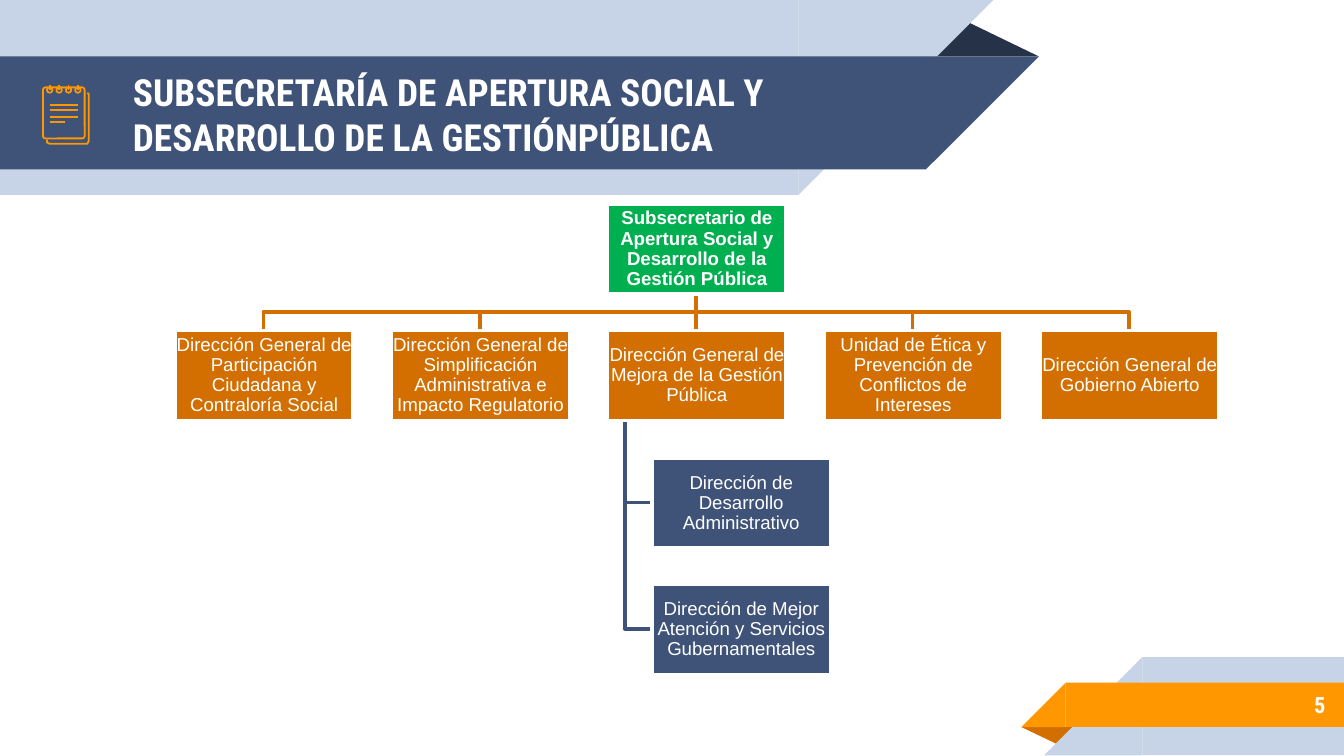
"""Build the organisation chart slide of an undersecretariat."""
from lxml import etree
from pptx import Presentation
from pptx.dml.color import RGBColor
from pptx.enum import shapes, text
from pptx.oxml.ns import qn
from pptx.util import Pt

SCALE = 9144  # EMU in one px, 100 px to the inch
KIND = shapes.MSO_SHAPE
ALIGN = text.PP_ALIGN
WHITE, PALE, NAVY, DARK = "FFFFFF", "C7D3E6", "3F5378", "263248"
GOLD, RUST, GREEN = "FF9800", "D26F00", "00B050"
HEAD_FONT, BODY_FONT = "Roboto Condensed", "Arial"

TITLE = "SUBSECRETARÍA DE APERTURA SOCIAL Y DESARROLLO DE LA GESTIÓNPÚBLICA"
PAGE = "5"
CHIEF = "Subsecretario de Apertura Social y Desarrollo de la Gestión Pública"
UNITS = [
    "Dirección General de Participación Ciudadana y Contraloría Social",
    "Dirección General de Simplificación Administrativa e Impacto Regulatorio",
    "Dirección General de Mejora de la Gestión Pública",
    "Unidad de Ética y Prevención de Conflictos de Intereses",
    "Dirección General de Gobierno Abierto",
]
TEAMS = [
    "Dirección de Desarrollo Administrativo",
    "Dirección de Mejor Atención y Servicios Gubernamentales",
]

# kind, left, top, width, height, fill, turn, flip
BANDS = [
    (KIND.ISOSCELES_TRIANGLE, 688, 14, 85, 28, DARK, 0, False),
    (KIND.RECTANGLE, 0, 0, 594, 145, PALE, 180, True),
    (KIND.RIGHT_TRIANGLE, 594, 0, 145, 145, PALE, 180, True),
    (KIND.RECTANGLE, 0, 42, 689, 84, NAVY, 180, True),
    (KIND.RIGHT_TRIANGLE, 689, 42, 84, 84, NAVY, 180, True),
    (KIND.ISOSCELES_TRIANGLE, 760, 541, 43, 14, RUST, 180, False),
    (KIND.RECTANGLE, 850, 489, 150, 73, PALE, 0, True),
    (KIND.RIGHT_TRIANGLE, 777, 489, 73, 73, PALE, 0, True),
    (KIND.RECTANGLE, 793, 508, 207, 33, GOLD, 0, True),
    (KIND.RIGHT_TRIANGLE, 760, 508, 33, 33, GOLD, 0, True),
]
BACK_SHEET = [(35, 104), (35, 106), (37, 107), (65, 107), (66, 105), (66, 70), (65, 69)]
RINGS = [37, 44, 51, 58]
RULES = [(78, 58), (82, 58), (87, 58), (91, 48)]

BOX_W, BOX_H = 133, 67
UNIT_X, UNIT_Y, UNIT_STEP = 130, 246, 161
CHIEF_Y = 152
TEAM_X, TEAM_Y, TEAM_STEP = 485, 341, 94
STEM_X = 465

prs = Presentation()
prs.slide_width, prs.slide_height = 1000 * SCALE, int(562.5 * SCALE)
slide = prs.slides.add_slide(prs.slide_layouts[6])
tree = slide.shapes


def px(*sizes):
    return [size * SCALE for size in sizes]


def hue(code):
    return RGBColor.from_string(code)


def paint(shape, fill=None, line=None, width=0.96):
    shape.shadow.inherit = False
    if fill:
        shape.fill.solid()
        shape.fill.fore_color.rgb = hue(fill)
    else:
        shape.fill.background()
    if line:
        shape.line.color.rgb = hue(line)
        shape.line.width = Pt(width)
    else:
        shape.line.fill.background()


def write(shape, words, font, size, align, bold=False, inset=10):
    frame = shape.text_frame
    frame.word_wrap = True
    frame.vertical_anchor = text.MSO_ANCHOR.MIDDLE
    frame.margin_left, frame.margin_right = px(inset, inset)
    frame.margin_top, frame.margin_bottom = px(inset, inset)
    para = frame.paragraphs[0]
    para.alignment = align
    run = para.add_run()
    run.text = words
    run.font.name, run.font.size, run.font.bold = font, Pt(size), bold
    run.font.color.rgb = hue(WHITE)
    return para


def stroke(x1, y1, x2, y2, color, width=0.96):
    line = tree.add_connector(shapes.MSO_CONNECTOR.STRAIGHT, *px(x1, y1, x2, y2))
    line.line.color.rgb = hue(color)
    line.line.width = Pt(width)
    etree.SubElement(line._element.spPr, qn("a:effectLst"))


def trace(points, color, width=0.96):
    pen = tree.build_freeform(*points[0], scale=SCALE)
    pen.add_line_segments(points[1:], close=False)
    paint(pen.convert_to_shape(), None, color, width)


def box(x, y, words, fill, bold=False):
    shape = tree.add_shape(KIND.RECTANGLE, *px(x, y, BOX_W, BOX_H))
    paint(shape, fill, WHITE, 2)
    para = write(shape, words, BODY_FONT, 10, ALIGN.CENTER, bold, 0)
    para.line_spacing = 0.9


def draw_bands():
    for kind, x, y, w, h, fill, turn, flip in BANDS:
        shape = tree.add_shape(kind, *px(x, y, w, h))
        paint(shape, fill)
        shape.rotation = turn
        if flip:
            shape._element.spPr.xfrm.set("flipH", "1")
        if kind == KIND.ISOSCELES_TRIANGLE:
            shape.adjustments[0] = 0.32


def draw_pad():
    trace(BACK_SHEET, GOLD)
    sheet = tree.add_shape(KIND.ROUNDED_RECTANGLE, *px(32, 65, 31, 38))
    sheet.adjustments[0] = 0.06
    paint(sheet, None, GOLD)
    for x in RINGS:
        ring = tree.add_shape(KIND.OVAL, *px(x - 2, 65, 4, 4))
        paint(ring, None, GOLD)
        stroke(x, 63, x, 67, GOLD)
    for y, end in RULES:
        stroke(37, y, end, y, GOLD)


def draw_chart():
    units = [UNIT_X + UNIT_STEP * i for i in range(len(UNITS))]
    teams = [TEAM_Y + TEAM_STEP * i for i in range(len(TEAMS))]
    mid = units[len(units) // 2]
    hub, low = mid + BOX_W // 2, CHIEF_Y + BOX_H - 1
    bar = (low + UNIT_Y) // 2
    for x in units:
        end = x + BOX_W // 2
        if x == mid:
            stroke(hub, low, hub, UNIT_Y, RUST, 2)
        else:
            trace([(hub, low), (hub, bar), (end, bar), (end, UNIT_Y)], RUST, 2)
    for y in teams:
        turn = y + BOX_H // 2
        trace([(STEM_X, UNIT_Y + BOX_H), (STEM_X, turn), (TEAM_X, turn)], NAVY, 2)
    box(mid, CHIEF_Y, CHIEF, GREEN, True)
    for x, words in zip(units, UNITS):
        box(x, UNIT_Y, words, RUST)
    for y, words in zip(teams, TEAMS):
        box(TEAM_X, y, words, NAVY)


draw_bands()
write(tree.add_textbox(*px(89, 43, 575, 84)), TITLE, HEAD_FONT, 20, ALIGN.LEFT, True)
write(tree.add_textbox(*px(833, 507, 163, 35)), PAGE, HEAD_FONT, 12, ALIGN.RIGHT, True)
draw_pad()
draw_chart()
prs.save("out.pptx")
